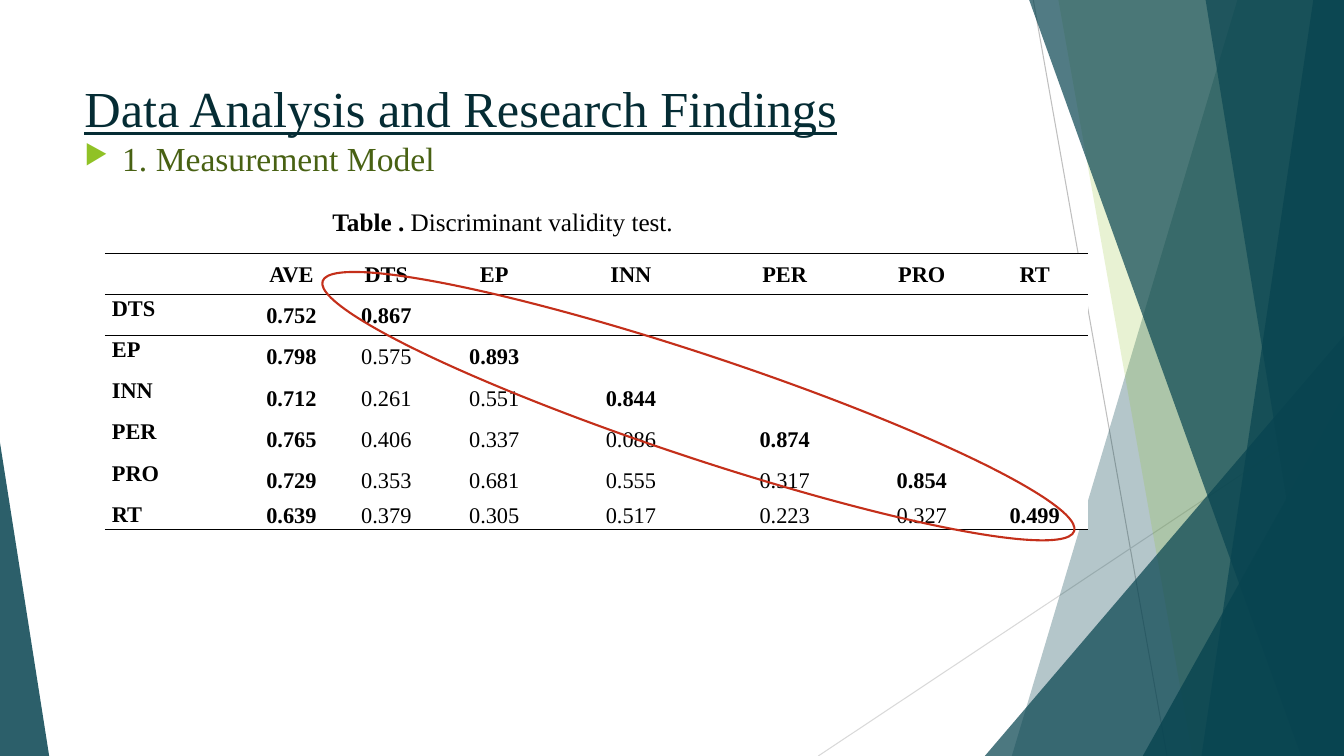
"""Build the discriminant validity slide of a research presentation."""
from lxml import etree
from pptx import Presentation
from pptx import util as u
from pptx.dml.color import RGBColor
from pptx.enum import shapes, text
from pptx.oxml import ns

TEAL = RGBColor(0x08, 0x44, 0x50)
LIME = RGBColor(0x90, 0xC2, 0x26)
INK = RGBColor(0x05, 0x2C, 0x34)
OLIVE = RGBColor(0x48, 0x61, 0x13)
RED = RGBColor(0xC4, 0x2F, 0x1A)
BLACK = RGBColor(0, 0, 0)
WHITE = RGBColor(0xFF, 0xFF, 0xFF)
GREY = RGBColor(0xBF, 0xBF, 0xBF)
PALE_GREY = RGBColor(0xD9, 0xD9, 0xD9)
WIDTH, HEIGHT = 33.87, 19.05
PLAIN_TABLE = "{2D5ABB26-0587-4C30-8999-92F81FD0307C}"

HEADINGS = ["DTS", "EP", "INN", "PER", "PRO", "RT"]
AVE = ["0.752", "0.798", "0.712", "0.765", "0.729", "0.639"]
CORRELATIONS = [
    ["0.867"],
    ["0.575", "0.893"],
    ["0.261", "0.551", "0.844"],
    ["0.406", "0.337", "0.086", "0.874"],
    ["0.353", "0.681", "0.555", "0.317", "0.854"],
    ["0.379", "0.305", "0.517", "0.223", "0.327", "0.499"],
]
COLUMN_WIDTHS = [3.51, 2.39, 2.39, 3.05, 3.84, 3.91, 3, 2.69]
ROW_HEIGHTS = [1.04] * 6 + [0.64]


def apply(target, formats):
    for name, value in formats.items():
        setattr(target, name, value)


def add_xml(parent, tag, **attributes):
    return etree.SubElement(parent, ns.qn(tag), attributes)


class ValiditySlide:
    """Slide with the shared font and one method per kind of element."""

    font = "Times New Roman"

    def __init__(self, slide):
        self.shapes = slide.shapes

    def line(self, start, end, color):
        ends = [u.Cm(value) for value in (*start, *end)]
        line = self.shapes.add_connector(shapes.MSO_CONNECTOR.STRAIGHT, *ends)
        line.line.color.rgb = color
        line.line.width = u.Pt(0.75)
        add_xml(line._element.spPr, "a:effectLst")

    def paint(self, shape, color, opacity):
        shape.shadow.inherit = False
        shape.line.fill.background()
        shape.fill.solid()
        shape.fill.fore_color.rgb = color
        tint = shape._element.spPr.find(".//" + ns.qn("a:srgbClr"))
        add_xml(tint, "a:alpha", val=str(opacity * 1000))

    def band(self, top_x, bottom_x, opacity, color=TEAL):
        top = u.Cm(-0.02)
        outline = self.shapes.build_freeform(u.Cm(top_x), top, scale=1)
        outline.add_line_segments([
            (u.Cm(WIDTH), top), (u.Cm(WIDTH), u.Cm(HEIGHT)), (u.Cm(bottom_x), u.Cm(HEIGHT))])
        self.paint(outline.convert_to_shape(), color, opacity)

    def corner(self, left, top, width, apex, opacity):
        box = [u.Cm(value) for value in (left, top, width, HEIGHT - top)]
        corner = self.shapes.add_shape(shapes.MSO_SHAPE.ISOSCELES_TRIANGLE, *box)
        corner.adjustments[0] = apex
        self.paint(corner, TEAL, opacity)

    def add_words(self, paragraph, wording, size, color, **formats):
        run = paragraph.add_run()
        run.text = wording
        run.font.color.rgb = color
        apply(run.font, {"name": self.font, "size": u.Pt(size), **formats})

    def text_box(self, box, **formats):
        frame = self.shapes.add_textbox(*[u.Cm(value) for value in box]).text_frame
        apply(frame, {"word_wrap": True, **formats})
        return frame.paragraphs[0]

    def bullet(self, paragraph, symbol, color):
        properties = paragraph._p.get_or_add_pPr()
        properties.set("marL", str(u.Cm(0.95)))
        properties.set("indent", str(u.Cm(-0.95)))
        add_xml(add_xml(properties, "a:buClr"), "a:srgbClr", val=str(color))
        add_xml(properties, "a:buSzPct", val="80000")
        add_xml(properties, "a:buChar", char=symbol)

    def rule(self, cell, side):
        border = etree.Element(ns.qn(side), w=str(u.Pt(1)))
        add_xml(add_xml(border, "a:solidFill"), "a:srgbClr", val=str(BLACK))
        cell._tc.get_or_add_tcPr().insert(0, border)

    def cell(self, cell, wording, bold, label):
        anchor = text.MSO_ANCHOR.TOP if label else text.MSO_ANCHOR.MIDDLE
        apply(cell, {"margin_left": u.Cm(0.18), "margin_right": u.Cm(0.18),
                     "margin_top": 0, "margin_bottom": 0, "vertical_anchor": anchor})
        cell.fill.solid()
        cell.fill.fore_color.rgb = WHITE
        paragraph = cell.text_frame.paragraphs[0]
        apply(paragraph, {"line_spacing": 1.07, "space_after": u.Pt(8),
                          "alignment": text.PP_ALIGN.LEFT if label else text.PP_ALIGN.CENTER})
        self.add_words(paragraph, wording, 16, BLACK, bold=bold)

    def table(self, left, top, rows):
        size = sum(COLUMN_WIDTHS), sum(ROW_HEIGHTS)
        box = [u.Cm(value) for value in (left, top, *size)]
        table = self.shapes.add_table(len(rows), len(COLUMN_WIDTHS), *box).table
        apply(table, {"first_row": False, "horz_banding": False})
        table._tbl.tblPr.find(ns.qn("a:tableStyleId")).text = PLAIN_TABLE
        for column, width in zip(table.columns, COLUMN_WIDTHS):
            column.width = u.Cm(width)
        for row, height in zip(table.rows, ROW_HEIGHTS):
            row.height = u.Cm(height)
        last = len(rows) - 1
        for r, row in enumerate(rows):
            for c, wording in enumerate(row):
                cell = table.cell(r, c)
                self.cell(cell, wording, r == 0 or c < 2 or c == r + 1, c == 0)
                if r in (0, last):
                    self.rule(cell, "a:lnB")
                if r in (0, 1):
                    self.rule(cell, "a:lnT")

    def ring(self, box, rotation):
        ring = self.shapes.add_shape(shapes.MSO_SHAPE.OVAL, *[u.Cm(value) for value in box])
        ring.rotation = rotation
        ring.shadow.inherit = False
        ring.fill.background()
        ring.line.color.rgb = RED
        ring.line.width = u.Pt(1.5)


def main():
    deck = Presentation()
    apply(deck, {"slide_width": u.Cm(WIDTH), "slide_height": u.Cm(HEIGHT)})
    page = ValiditySlide(deck.slides.add_slide(deck.slide_layouts[6]))

    page.line((26.04, 0), (29.41, HEIGHT), GREY)
    page.line((WIDTH, 10.24), (20.62, HEIGHT), PALE_GREY)
    page.band(31.19, 25.5, 30)
    page.band(26.67, 30.05, 20, LIME)
    page.corner(24.82, 8.46, 9.05, 1, 72)
    page.band(25.93, 32.79, 70)
    page.band(33.1, 30.28, 70)
    page.band(30.38, 33.48, 65)
    page.corner(28.8, 9.98, 5.07, 1, 80)
    page.corner(0, 11.15, 1.24, 0, 85)

    title = page.text_box((1.88, 1.7, 23.88, 2.31), margin_top=u.Cm(0.25))
    page.add_words(title, "Data Analysis and Research Findings", 36, INK, underline=True)
    section = page.text_box((1.88, 3.3, 30.53, 1.37), vertical_anchor=text.MSO_ANCHOR.MIDDLE)
    page.bullet(section, "▶", LIME)
    page.add_words(section, "1. Measurement Model", 24, OLIVE)
    caption = page.text_box((8.13, 5.08, 9.5, 1.02), word_wrap=False)
    page.add_words(caption, "Table . ", 18, BLACK, bold=True)
    page.add_words(caption, "Discriminant validity test.", 18, BLACK)

    rows = [["", "AVE", *HEADINGS]]
    for heading, ave, values in zip(HEADINGS, AVE, CORRELATIONS):
        rows.append([heading, ave, *values] + [""] * (len(HEADINGS) - len(values)))
    page.table(2.64, 6.38, rows)
    page.ring((7.62, 8.94, 19.96, 2.59), 18.4)
    deck.save("out.pptx")


if __name__ == "__main__":
    main()
